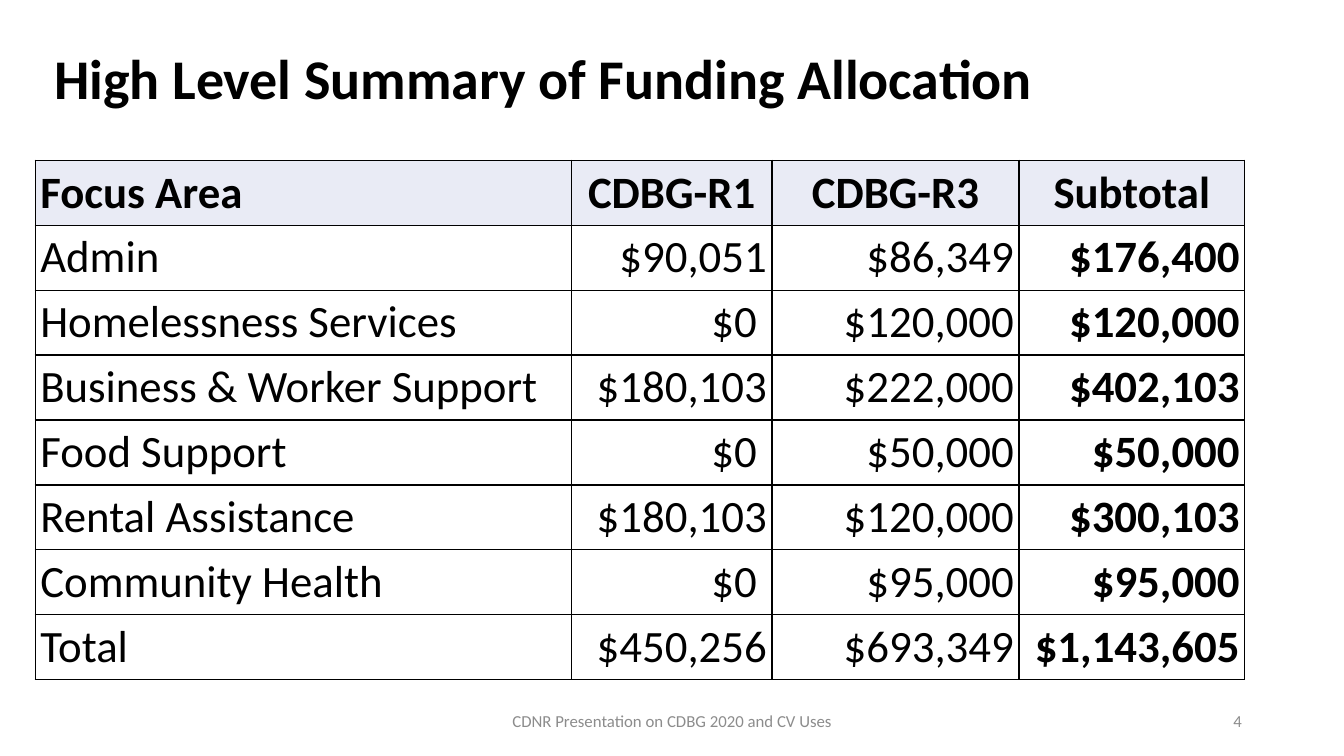
from lxml import etree
from pptx import Presentation
from pptx.dml.color import RGBColor
from pptx.enum.text import MSO_ANCHOR, PP_ALIGN
from pptx.oxml.ns import qn
from pptx.util import Pt

LEFT, CENTER, RIGHT = PP_ALIGN.LEFT, PP_ALIGN.CENTER, PP_ALIGN.RIGHT
MIDDLE, BOTTOM = MSO_ANCHOR.MIDDLE, MSO_ANCHOR.BOTTOM

BLACK = RGBColor(0x00, 0x00, 0x00)
WHITE = RGBColor(0xFF, 0xFF, 0xFF)
GRAY = RGBColor(0x8C, 0x8C, 0x8C)
HEADER_FILL = RGBColor(0xE9, 0xEB, 0xF5)

ROW_HEIGHT = 46.4
COLUMN_WIDTHS = [383, 143.3, 176.4, 161.3]
FUNDING = [
    ["Focus Area", "CDBG-R1", "CDBG-R3", "Subtotal"],
    ["Admin", "$90,051", "$86,349", "$176,400"],
    ["Homelessness Services", "$0 ", "$120,000", "$120,000"],
    ["Business & Worker Support", "$180,103", "$222,000", "$402,103"],
    ["Food Support", "$0 ", "$50,000", "$50,000"],
    ["Rental Assistance", "$180,103", "$120,000", "$300,103"],
    ["Community Health", "$0 ", "$95,000", "$95,000"],
    ["Total", "$450,256", "$693,349", "$1,143,605"],
]
TEXT_BOXES = [
    ("High Level Summary of Funding Allocation", 31.7, 5.8, 828, 104.4, 40, BLACK, True, LEFT, 0.9),
    ("CDNR Presentation on CDBG 2020 and CV Uses", 318.2, 500.4, 324, 28.8, 12, GRAY, False, CENTER, 1.0),
    ("4", 678.2, 500.4, 216, 28.8, 12, GRAY, False, RIGHT, 1.0),
]


def write_text(text_frame, text, size, color, bold, alignment):
    paragraph = text_frame.paragraphs[0]
    paragraph.text = text
    paragraph.alignment = alignment
    paragraph.font.name = "Calibri"
    paragraph.font.size = Pt(size)
    paragraph.font.bold = bold
    paragraph.font.color.rgb = color
    return paragraph


def add_borders(cell):
    properties = cell._tc.get_or_add_tcPr()
    for position, side in enumerate(("a:lnL", "a:lnR", "a:lnT", "a:lnB")):
        line = etree.Element(qn(side), w=str(Pt(1)))
        fill = etree.SubElement(line, qn("a:solidFill"))
        etree.SubElement(fill, qn("a:srgbClr"), val=str(BLACK))
        properties.insert(position, line)


presentation = Presentation()
presentation.slide_width = Pt(960)
presentation.slide_height = Pt(540)
slide = presentation.slides.add_slide(presentation.slide_layouts[6])

for text, left, top, width, height, size, color, bold, alignment, spacing in TEXT_BOXES:
    text_box = slide.shapes.add_textbox(Pt(left), Pt(top), Pt(width), Pt(height))
    text_box.text_frame.word_wrap = True
    text_box.text_frame.vertical_anchor = MIDDLE
    paragraph = write_text(text_box.text_frame, text, size, color, bold, alignment)
    paragraph.line_spacing = spacing

table = slide.shapes.add_table(
    len(FUNDING), len(COLUMN_WIDTHS), Pt(25.2), Pt(114.5),
    Pt(sum(COLUMN_WIDTHS)), Pt(ROW_HEIGHT * len(FUNDING)),
).table
table.horz_banding = False
for column, width in zip(table.columns, COLUMN_WIDTHS):
    column.width = Pt(width)

for row_index, values in enumerate(FUNDING):
    table.rows[row_index].height = Pt(ROW_HEIGHT)
    is_header = row_index == 0
    for column_index, value in enumerate(values):
        cell = table.cell(row_index, column_index)
        cell.margin_left = cell.margin_right = Pt(3.6)
        cell.margin_top = cell.margin_bottom = Pt(3.6)
        cell.vertical_anchor = BOTTOM
        cell.fill.solid()
        cell.fill.fore_color.rgb = HEADER_FILL if is_header else WHITE
        add_borders(cell)
        if column_index == 0:
            alignment = LEFT
        else:
            alignment = CENTER if is_header else RIGHT
        bold = is_header or column_index == len(values) - 1
        write_text(cell.text_frame, value, 32, BLACK, bold, alignment)

presentation.save("out.pptx")
